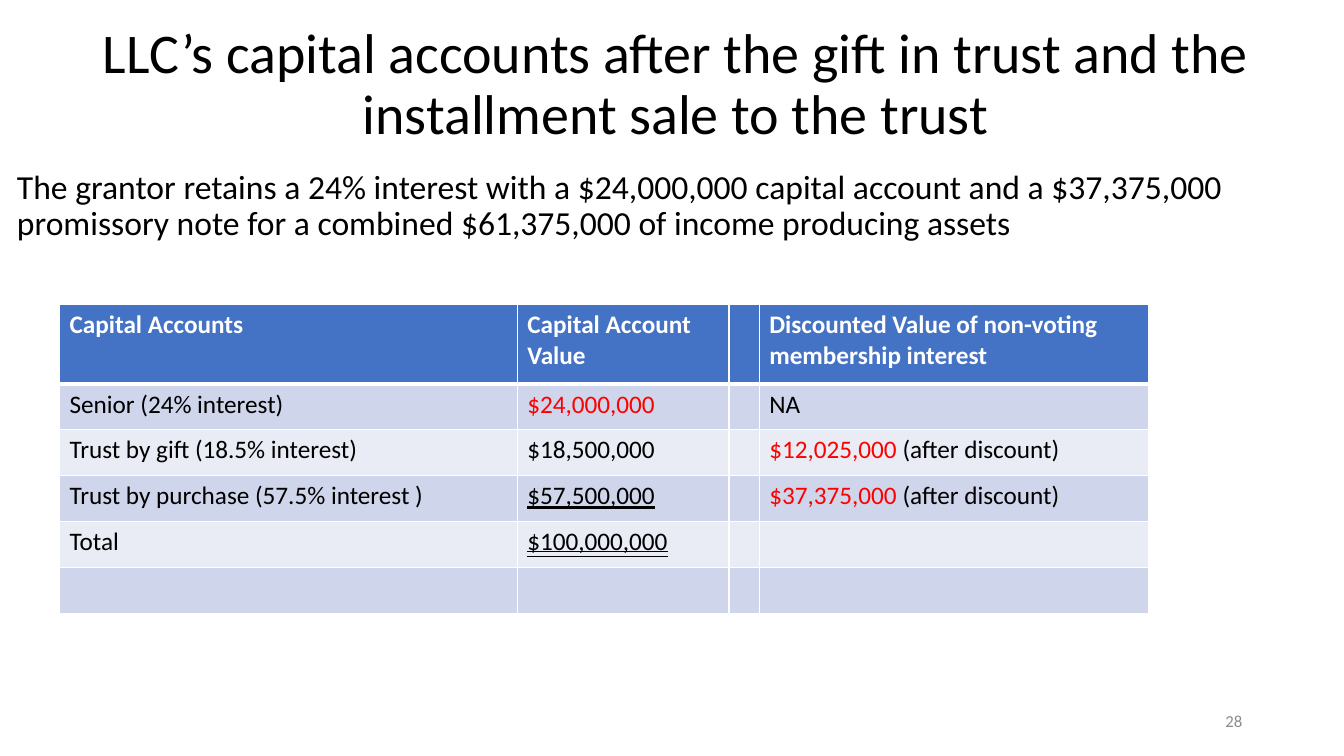
from lxml import etree
from pptx import Presentation
from pptx.dml.color import RGBColor
from pptx.enum.text import MSO_ANCHOR, MSO_UNDERLINE, PP_ALIGN
from pptx.oxml.ns import qn
from pptx.util import Inches, Pt

LEFT, CENTER, RIGHT = PP_ALIGN.LEFT, PP_ALIGN.CENTER, PP_ALIGN.RIGHT
TOP, MIDDLE, BOTTOM = MSO_ANCHOR.TOP, MSO_ANCHOR.MIDDLE, MSO_ANCHOR.BOTTOM
SINGLE, DOUBLE = MSO_UNDERLINE.SINGLE_LINE, MSO_UNDERLINE.DOUBLE_LINE

BLACK = RGBColor(0x00, 0x00, 0x00)
WHITE = RGBColor(0xFF, 0xFF, 0xFF)
RED = RGBColor(0xFF, 0x00, 0x00)
GRAY = RGBColor(0x8C, 0x8C, 0x8C)
HEADER_BLUE = RGBColor(0x44, 0x72, 0xC4)
BANDS = (RGBColor(0xCF, 0xD5, 0xEA), RGBColor(0xE9, 0xEB, 0xF5))

COLUMN_WIDTHS = (4.54, 2.1, 0.3, 3.86)
ROW_HEIGHTS = (0.79,) + (0.455,) * 5

# Each cell is a list of (text, format) runs.
HEADER_FORMAT = {"color": WHITE, "bold": True}
AFTER_DISCOUNT = ("(after discount)", {})
ACCOUNTS = (
    ([("Capital Accounts", HEADER_FORMAT)],
     [("Capital Account Value", HEADER_FORMAT)],
     [],
     [("Discounted Value of non-voting membership interest", HEADER_FORMAT)]),
    ([("Senior (24% interest)", {})],
     [("$24,000,000", {"color": RED})],
     [],
     [("NA", {})]),
    ([("Trust by gift (18.5% interest)", {})],
     [("$18,500,000", {})],
     [],
     [("$12,025,000 ", {"color": RED}), AFTER_DISCOUNT]),
    ([("Trust by purchase (57.5% interest )", {})],
     [("$57,500,000", {"underline": SINGLE})],
     [],
     [("$37,375,000 ", {"color": RED}), AFTER_DISCOUNT]),
    ([("Total", {})],
     [("$100,000,000", {"underline": DOUBLE})],
     [],
     []),
    ([], [], [], []),
)


def add_run(p, text, size=18, color=BLACK, bold=False, underline=None):
    r = p.add_run()
    r.text = text
    r.font.name = "Calibri"
    r.font.size = Pt(size)
    r.font.color.rgb = color
    r.font.bold = bold
    r.font.underline = underline


def set_borders(cell, bottom):
    """Draw white cell borders, 1 pt wide except for the bottom one."""
    tcPr = cell._tc.get_or_add_tcPr()
    widths = {"a:lnL": 1, "a:lnR": 1, "a:lnT": 1, "a:lnB": bottom}
    for i, (tag, width) in enumerate(widths.items()):
        ln = etree.Element(qn(tag), w=str(Pt(width)))
        fill = etree.SubElement(ln, qn("a:solidFill"))
        etree.SubElement(fill, qn("a:srgbClr"), val=str(WHITE))
        tcPr.insert(i, ln)


class SlideBuilder:
    def __init__(self, prs):
        self.s = prs.slides.add_slide(prs.slide_layouts[6])

    def text(self, text, left, top, width, height, align=LEFT, anchor=TOP,
             spacing=0.9, **fmt):
        box = self.s.shapes.add_textbox(Inches(left), Inches(top),
                                        Inches(width), Inches(height))
        tf = box.text_frame
        tf.word_wrap = True
        tf.vertical_anchor = anchor
        p = tf.paragraphs[0]
        p.alignment = align
        p.line_spacing = spacing
        add_run(p, text, **fmt)

    def table(self, rows, left, top, widths, heights):
        frame = self.s.shapes.add_table(
            len(rows), len(widths), Inches(left), Inches(top),
            Inches(sum(widths)), Inches(sum(heights)))
        table = frame.table
        for column, width in zip(table.columns, widths):
            column.width = Inches(width)
        for i, (cells, height) in enumerate(zip(rows, heights)):
            table.rows[i].height = Inches(height)
            for j, runs in enumerate(cells):
                cell = table.cell(i, j)
                cell.fill.solid()
                cell.fill.fore_color.rgb = BANDS[(i - 1) % 2] if i else HEADER_BLUE
                set_borders(cell, bottom=1 if i else 3)
                for text, fmt in runs:
                    add_run(cell.text_frame.paragraphs[0], text, **fmt)


def main():
    prs = Presentation()
    prs.slide_width, prs.slide_height = Inches(13.33), Inches(7.5)
    slide = SlideBuilder(prs)
    slide.text("LLC’s capital accounts after the gift in trust and the "
               "installment sale to the trust",
               0.07, 0.15, 13.26, 1.35, align=CENTER, anchor=BOTTOM, size=40)
    slide.text("The grantor retains a 24% interest with a $24,000,000 capital "
               "account and a $37,375,000 promissory note for a combined "
               "$61,375,000 of income producing assets",
               0.07, 1.64, 13.17, 5.57, size=24)
    slide.text("28", 9.42, 6.95, 3, 0.4, align=RIGHT, anchor=MIDDLE,
               spacing=1.0, size=12, color=GRAY)
    slide.table(ACCOUNTS, 0.59, 3.02, COLUMN_WIDTHS, ROW_HEIGHTS)
    prs.save("out.pptx")


if __name__ == "__main__":
    main()
